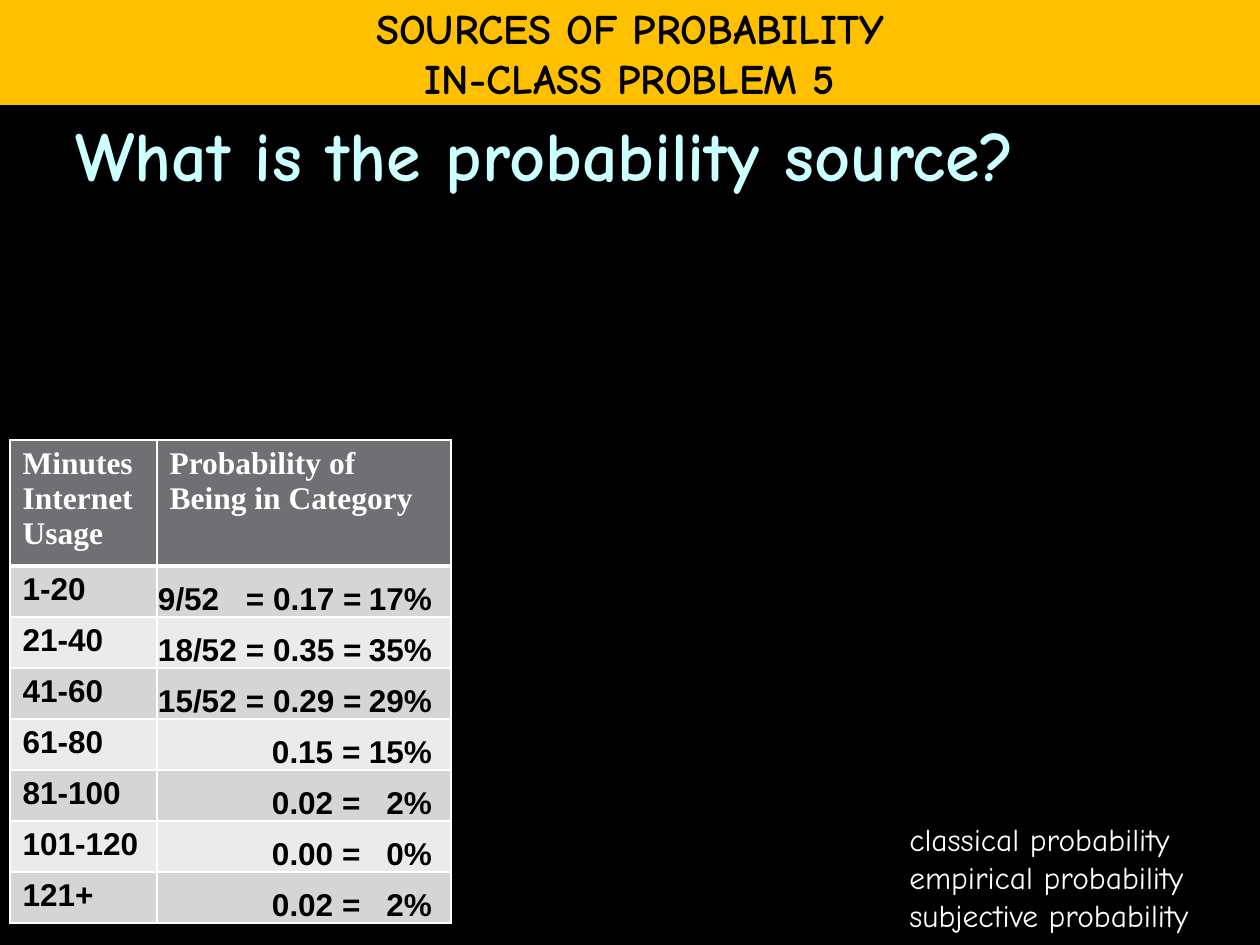
from dataclasses import dataclass

from lxml.etree import SubElement
from pptx import Presentation
from pptx.dml.color import RGBColor
from pptx.enum.text import MSO_ANCHOR, MSO_AUTO_SIZE, PP_ALIGN
from pptx.oxml.ns import qn
from pptx.util import Pt

EMU_PER_PX = 914400 / 126
COLORS = {
    "background": "000000",
    "banner": "FFC000",
    "question": "CCFFFF",
    "header": "6F6F74",
    "odd_row": "D5D5D6",
    "even_row": "EBEBEC",
    "light": "FFFFFF",
    "dark": "000000",
}


@dataclass(frozen=True)
class TextStyle:
    font: str
    size: int
    color: str
    bold: bool = True


@dataclass(frozen=True)
class UsageRow:
    minutes: str
    probability: str
    first_stop: int


BANNER_STYLE = TextStyle("Comic Neue", 24, "dark")
QUESTION_STYLE = TextStyle("Comic Neue", 40, "question")
HEADER_STYLE = TextStyle("Times New Roman", 18, "light")
CELL_STYLE = TextStyle("Arial", 18, "dark")
CHOICE_STYLE = TextStyle("Comic Neue", 18, "light", False)

EQUALS_STOP, DECIMAL_STOP, PERCENT_STOP = 88, 114, 274
HEADERS = ("Minutes Internet Usage", "Probability of Being in Category")
USAGE_ROWS = (
    UsageRow("1-20", "9/52\t= 0.17 =\t17%", EQUALS_STOP),
    UsageRow("21-40", "18/52\t= 0.35 =\t35%", EQUALS_STOP),
    UsageRow("41-60", "15/52\t= 0.29 =\t29%", EQUALS_STOP),
    UsageRow("61-80", "\t0.15 =\t15%", DECIMAL_STOP),
    UsageRow("81-100", "\t0.02 =\t2%", DECIMAL_STOP),
    UsageRow("101-120", "\t0.00 =\t0%", DECIMAL_STOP),
    UsageRow("121+", "\t0.02 =\t2%", DECIMAL_STOP),
)
CHOICES = ("classical probability", "empirical probability", "subjective probability")
COLUMN_WIDTHS = (147, 294)
HEADER_HEIGHT, ROW_HEIGHT = 126, 51


def px(length: int) -> int:
    return round(length * EMU_PER_PX)


def color(name: str) -> RGBColor:
    return RGBColor.from_string(COLORS[name])


def fill_solid(target, name: str) -> None:
    target.fill.solid()
    target.fill.fore_color.rgb = color(name)


def place(shape, left: int, top: int, width: int, height: int) -> None:
    shape.left, shape.top = px(left), px(top)
    shape.width, shape.height = px(width), px(height)


def write(text_frame, lines: tuple[str, ...], style: TextStyle, align=PP_ALIGN.LEFT) -> None:
    for index, line in enumerate(lines):
        paragraph = text_frame.add_paragraph() if index else text_frame.paragraphs[0]
        paragraph.alignment = align
        run = paragraph.add_run()
        run.text = line
        run.font.name = style.font
        run.font.size = Pt(style.size)
        run.font.bold = style.bold
        run.font.color.rgb = color(style.color)


def set_tab_stops(paragraph, stops: dict[int, str]) -> None:
    tab_list = SubElement(paragraph._p.get_or_add_pPr(), qn("a:tabLst"))
    for position, alignment in stops.items():
        SubElement(tab_list, qn("a:tab"), pos=str(px(position)), algn=alignment)


def set_borders(cell, top: int, bottom: int) -> None:
    properties = cell._tc.get_or_add_tcPr()
    for side, width in (("L", 1), ("R", 1), ("T", top), ("B", bottom)):
        line = SubElement(properties, qn(f"a:ln{side}"), w=str(Pt(width)))
        solid = SubElement(line, qn("a:solidFill"))
        SubElement(solid, qn("a:srgbClr"), val=COLORS["light"])


def format_cell(cell, text: str, style: TextStyle, fill: str, top: int, bottom: int) -> None:
    set_borders(cell, top, bottom)
    fill_solid(cell, fill)
    write(cell.text_frame, (text,), style)


def add_banner(slide) -> None:
    title = slide.shapes.title
    place(title, 0, 0, 1260, 105)
    fill_solid(title, "banner")
    text_frame = title.text_frame
    text_frame.word_wrap = False
    text_frame.auto_size = MSO_AUTO_SIZE.NONE
    text_frame.vertical_anchor = MSO_ANCHOR.MIDDLE
    write(text_frame, ("SOURCES OF PROBABILITY", "IN-CLASS PROBLEM 5"), BANNER_STYLE, PP_ALIGN.CENTER)


def add_question(slide) -> None:
    body = slide.placeholders[1]
    place(body, 63, 105, 1134, 777)
    body.text_frame.auto_size = MSO_AUTO_SIZE.NONE
    write(body.text_frame, ("What is the probability source?",), QUESTION_STYLE)
    properties = body.text_frame.paragraphs[0]._p.get_or_add_pPr()
    properties.set("marL", "0")
    properties.set("indent", "0")
    SubElement(properties, qn("a:buNone"))


def add_usage_table(slide) -> None:
    height = HEADER_HEIGHT + ROW_HEIGHT * len(USAGE_ROWS)
    frame = slide.shapes.add_table(
        len(USAGE_ROWS) + 1, len(HEADERS), px(10), px(440), px(sum(COLUMN_WIDTHS)), px(height)
    )
    table = frame.table
    for column, width in zip(table.columns, COLUMN_WIDTHS):
        column.width = px(width)
    for index, row in enumerate(table.rows):
        row.height = px(ROW_HEIGHT if index else HEADER_HEIGHT)
    for index, header in enumerate(HEADERS):
        format_cell(table.cell(0, index), header, HEADER_STYLE, "header", 1, 3)
    for index, usage in enumerate(USAGE_ROWS, start=1):
        fill = "odd_row" if index % 2 else "even_row"
        top = 3 if index == 1 else 1
        format_cell(table.cell(index, 0), usage.minutes, CELL_STYLE, fill, top, 1)
        cell = table.cell(index, 1)
        format_cell(cell, usage.probability, CELL_STYLE, fill, top, 1)
        cell.vertical_anchor = MSO_ANCHOR.BOTTOM
        cell.margin_left = cell.margin_right = cell.margin_top = px(1)
        cell.margin_bottom = 0
        set_tab_stops(cell.text_frame.paragraphs[0], {usage.first_stop: "l", PERCENT_STOP: "r"})


def add_choices(slide) -> None:
    box = slide.shapes.add_textbox(px(897), px(814), px(368), px(127))
    box.text_frame.word_wrap = True
    box.text_frame.auto_size = MSO_AUTO_SIZE.SHAPE_TO_FIT_TEXT
    write(box.text_frame, CHOICES, CHOICE_STYLE)


def main() -> None:
    presentation = Presentation()
    presentation.slide_width, presentation.slide_height = px(1260), px(945)
    slide = presentation.slides.add_slide(presentation.slide_layouts[1])
    fill_solid(slide.background, "background")
    add_banner(slide)
    add_question(slide)
    add_usage_table(slide)
    add_choices(slide)
    presentation.save("out.pptx")


if __name__ == "__main__":
    main()
